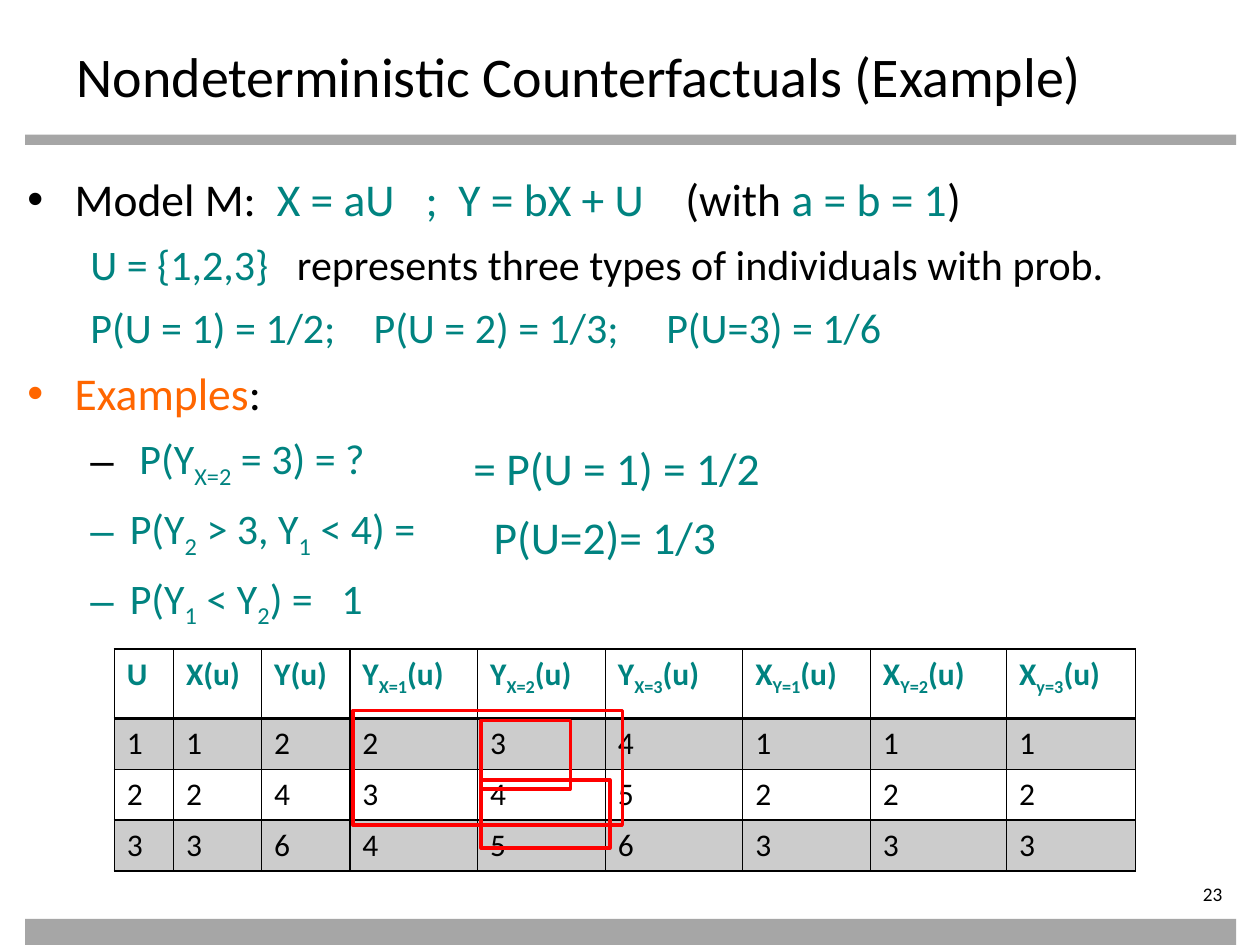
import pptx
import pptx.dml.color
import pptx.enum.shapes
import pptx.enum.text
import pptx.oxml
import pptx.oxml.ns
import pptx.util
from lxml import etree

Pt = pptx.util.Pt
RGBColor = pptx.dml.color.RGBColor
qn = pptx.oxml.ns.qn
ALIGN = pptx.enum.text.PP_ALIGN

BLACK = RGBColor(0x00, 0x00, 0x00)
TEAL = RGBColor(0x00, 0x83, 0x80)
ORANGE = RGBColor(0xFF, 0x66, 0x00)
RED = RGBColor(0xFF, 0x00, 0x00)
GREY = RGBColor(0xA6, 0xA6, 0xA6)
FONT = "Calibri"
SPACE_WIDTH = 0.226  # share of the font size


def gap(spaces, size):
    """One space, tracked out to the width of several."""
    return " ", TEAL, (spaces - 1) * SPACE_WIDTH * size


def add_runs(paragraph, pieces, size, bold=False):
    """Each piece is text, colour and optional tracking; bars enclose subscripts."""
    for text, colour, *tracking in pieces:
        for position, part in enumerate(text.split("|")):
            run = paragraph.add_run()
            run.text = part
            for name, value in {"name": FONT, "size": Pt(size), "bold": bold}.items():
                setattr(run.font, name, value)
            run.font.color.rgb = colour
            properties = run._r.get_or_add_rPr()
            if position % 2:
                properties.set("baseline", "-25000")
            if tracking:
                properties.set("spc", str(round(tracking[0] * 100)))


def add_text_frame(slide, box, margins=(7.2, 3.6, 7.2, 3.6)):
    frame = slide.shapes.add_textbox(*map(Pt, box)).text_frame
    frame.word_wrap = True
    sides = ("margin_left", "margin_top", "margin_right", "margin_bottom")
    for side, margin in zip(sides, margins):
        setattr(frame, side, Pt(margin))
    return frame


def add_line_of_text(slide, box, text, size, colour):
    frame = add_text_frame(slide, box)
    add_runs(frame.paragraphs[0], [(text, colour)], size)


def add_rectangle(slide, box, fill=None, outline=None):
    rectangle = slide.shapes.add_shape(
        pptx.enum.shapes.MSO_SHAPE.RECTANGLE, *map(Pt, box))
    rectangle.shadow.inherit = False
    if fill is None:
        rectangle.fill.background()
    else:
        rectangle.fill.solid()
        rectangle.fill.fore_color.rgb = fill
    if outline is None:
        rectangle.line.fill.background()
    else:
        rectangle.line.color.rgb = outline
        rectangle.line.width = Pt(2)


def add_bullet(properties, character, colour):
    bullet_colour = etree.SubElement(properties, qn("a:buClr"))
    etree.SubElement(bullet_colour, qn("a:srgbClr")).set("val", str(colour))
    etree.SubElement(properties, qn("a:buFont")).set("typeface", "Arial")
    etree.SubElement(properties, qn("a:buChar")).set("char", character)


def add_body(slide, box):
    # Size, left margin, first-line indent, bullet, bullet colour, pieces
    lines = [
        (26, 27, -27, "•", BLACK, [
            ("Model M:", BLACK), gap(2, 26), ("X = aU", TEAL), gap(3, 26),
            (";", TEAL), gap(2, 26), ("Y = bX + U", TEAL), gap(4, 26),
            ("(with", BLACK), (" a = b = 1", TEAL), (")", BLACK)]),
        (24, 36, 0, None, None, [
            ("U = {1,2,3}", TEAL), gap(3, 24),
            ("represents three types of individuals with prob.", BLACK)]),
        (24, 36, 0, None, None, [
            ("P(U = 1) = 1/2;", TEAL), gap(4, 24), ("P(U = 2) = 1/3;", TEAL),
            gap(5, 24), ("P(U=3) = 1/6", TEAL)]),
        (26, 27, -27, "•", ORANGE, [("Examples", ORANGE), (":", BLACK)]),
        (24, 64, -28, "–", BLACK, [("P(Y|X=2| = 3) = ?", TEAL)]),
        (24, 58.5, -22.5, "–", TEAL, [("P(Y|2| > 3, Y|1| < 4) =", TEAL)]),
        (24, 58.5, -22.5, "–", TEAL, [
            ("P(Y|1| < Y|2|) =", TEAL), gap(3, 24), ("1", TEAL)]),
    ]
    frame = add_text_frame(slide, box)
    for row, (size, margin, indent, bullet, bullet_colour, pieces) in enumerate(lines):
        paragraph = frame.add_paragraph() if row else frame.paragraphs[0]
        properties = paragraph._p.get_or_add_pPr()
        properties.set("marL", str(Pt(margin)))
        properties.set("indent", str(Pt(indent)))
        if bullet:
            add_bullet(properties, bullet, bullet_colour)
        if row:
            paragraph.space_before = Pt(0.3 * size)
        add_runs(paragraph, pieces, size)


def add_borders(cell, widths):
    properties = cell._tc.get_or_add_tcPr()
    for side, width in widths.items():
        border = etree.SubElement(properties, qn("a:" + side), w=str(Pt(width)))
        fill = etree.SubElement(border, qn("a:solidFill"))
        etree.SubElement(fill, qn("a:srgbClr")).set("val", str(BLACK))


def shade(cell):
    """Black at 20 % opacity."""
    cell.fill.solid()
    cell.fill.fore_color.rgb = BLACK
    colour = cell._tc.tcPr.find(qn("a:solidFill")).find(qn("a:srgbClr"))
    etree.SubElement(colour, qn("a:alpha")).set("val", "20000")


def add_counterfactual_table(slide, box):
    rows = [
        ["U", "X(u)", "Y(u)", "Y|X=1|(u)", "Y|X=2|(u)", "Y|X=3|(u)",
         "X|Y=1|(u)", "X|Y=2|(u)", "X|y=3|(u)"],
        "112234111",
        "224345222",
        "336456333",
    ]
    column_widths = (33.8, 50.4, 50.4, 73, 73, 78.5, 73, 77.8, 73.6)
    row_heights = (39.8, 29, 29, 29)
    table = slide.shapes.add_table(
        len(rows), len(column_widths), *map(Pt, box)).table
    table.horz_banding = False
    for column, width in zip(table.columns, column_widths):
        column.width = Pt(width)
    for row, height in zip(table.rows, row_heights):
        row.height = Pt(height)
    for r, values in enumerate(rows):
        header = r == 0
        for c, value in enumerate(values):
            cell = table.cell(r, c)
            add_borders(cell, {"lnL": 1, "lnR": 1, "lnT": 2 if r == 1 else 1,
                               "lnB": 2 if header else 1})
            if r % 2:
                shade(cell)
            else:
                cell.fill.background()
            add_runs(cell.text_frame.paragraphs[0],
                     [(value, TEAL if header else BLACK)], 18, header)


def add_page_number(slide, box):
    frame = add_text_frame(slide, box, (0, 0, 7.2, 0))
    frame.paragraphs[0].alignment = ALIGN.RIGHT
    add_runs(frame.paragraphs[0], [("23", BLACK)], 11)


def main():
    presentation = pptx.Presentation()
    presentation.slide_width = Pt(720)
    presentation.slide_height = Pt(540)
    slide = presentation.slides.add_slide(presentation.slide_layouts[6])

    # Bars under the title and at the foot
    for bar in ((14.4, 77, 692, 5.8), (14.4, 525, 692, 15)):
        add_rectangle(slide, bar, fill=GREY)

    # Title, body and page number
    add_line_of_text(slide, (36.7, 20, 648, 40),
                     "Nondeterministic Counterfactuals (Example)", 32, BLACK)
    add_body(slide, (8.6, 94.3, 703, 266))
    add_page_number(slide, (626.4, 504, 79.2, 16))

    # Table of counterfactual values
    add_counterfactual_table(slide, (65.3, 370.8, 583.5, 126.8))

    # Answers beside the examples
    add_line_of_text(slide, (263.5, 247.7, 232.6, 39), "= P(U = 1) = 1/2", 26, TEAL)
    add_line_of_text(slide, (275, 287.3, 232.6, 39), "P(U=2)= 1/3", 26, TEAL)

    # Outlines around the cells that give the answers
    for outline in ((275, 411.8, 51, 39), (275, 445.7, 73.5, 39),
                    (201.6, 406, 154, 65.5)):
        add_rectangle(slide, outline, outline=RED)

    presentation.save("out.pptx")


if __name__ == "__main__":
    main()
